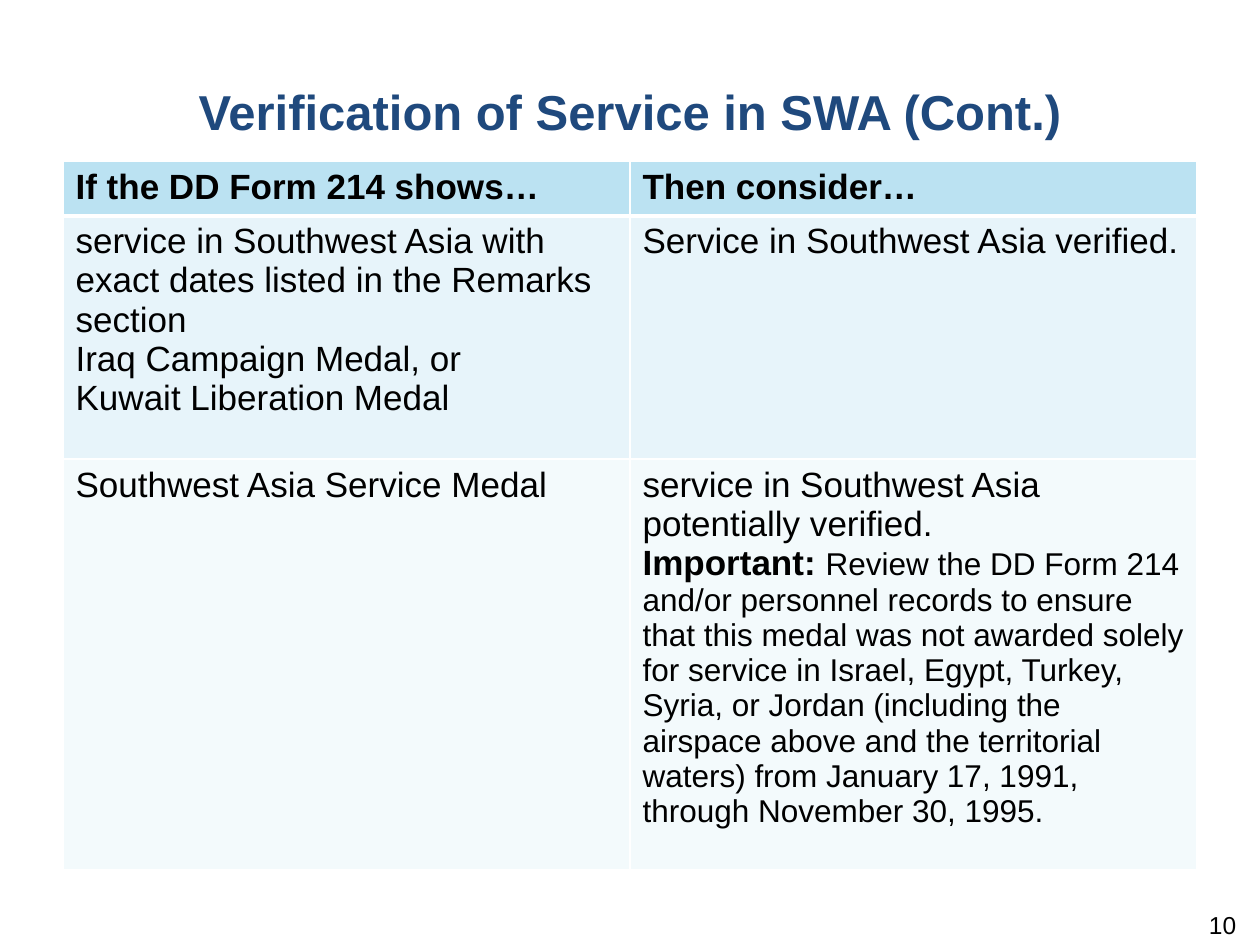
from typing import NamedTuple

from lxml.etree import SubElement
from pptx import Presentation
from pptx.dml.color import RGBColor
from pptx.enum.text import MSO_ANCHOR, PP_ALIGN
from pptx.oxml.ns import qn
from pptx.util import Inches, Pt


class Run(NamedTuple):
    """Text with its size, weight and colour."""
    text: str
    size: int = 20
    bold: bool = False
    tint: str = "000000"


class Row(NamedTuple):
    """Table row: height, fill, lower border and cells of paragraphs of runs."""
    height: float
    fill: str
    base: int
    cells: list


class Label(NamedTuple):
    """Text box with its place, alignment and frame format."""
    place: tuple
    run: Run
    align: PP_ALIGN
    frame: dict


LABELS = [
    Label((0.4, 0.57, 9.2, 0.71), Run("Verification of Service in SWA (Cont.)", 28, True, "1F497D"),
          PP_ALIGN.CENTER,
          {"vertical_anchor": MSO_ANCHOR.MIDDLE, "margin_bottom": Inches(0.14)}),
    Label((7.58, 7.22, 2.33, 0.4), Run("10", 14), PP_ALIGN.RIGHT,
          {"vertical_anchor": MSO_ANCHOR.TOP, "margin_top": 0}),
]

REVIEW = (
    "Review the DD Form 214 and/or personnel records to ensure that this medal "
    "was not awarded solely for service in Israel, Egypt, Turkey, Syria, or Jordan "
    "(including the airspace above and the territorial waters) from January 17, 1991, "
    "through November 30, 1995."
)

ROWS = [
    Row(0.41, "BBE2F2", 3, [
        [[Run("If the DD Form 214 shows…", bold=True)]],
        [[Run("Then consider…", bold=True)]],
    ]),
    Row(1.93, "E7F4FA", 1, [
        [[Run("service in Southwest Asia with exact dates listed in the Remarks section")],
         [Run("Iraq Campaign Medal, or")],
         [Run("Kuwait Liberation Medal")]],
        [[Run("Service in Southwest Asia verified.")]],
    ]),
    Row(3.26, "F3FAFC", 1, [
        [[Run("Southwest Asia Service Medal")]],
        [[Run("service in Southwest Asia potentially verified.")],
         [Run("Important: ", bold=True), Run(REVIEW, 18)]],
    ]),
]


def shade(code: str) -> RGBColor:
    """Turn a hex string into a colour."""
    return RGBColor.from_string(code)


def style(item: object, form: dict) -> None:
    """Set each format value on the item."""
    for name, value in form.items():
        setattr(item, name, value)


def write(frame: object, paras: list, align: PP_ALIGN = PP_ALIGN.LEFT) -> None:
    """Fill a text frame with paragraphs of runs."""
    for num, runs in enumerate(paras):
        para = frame.add_paragraph() if num else frame.paragraphs[0]
        para.alignment = align
        for run in runs:
            part = para.add_run()
            part.text = run.text
            style(part.font, {"name": "Arial", "size": Pt(run.size), "bold": run.bold})
            part.font.color.rgb = shade(run.tint)


def edge(cell: object, widths: dict) -> None:
    """Draw white cell borders of the given point widths."""
    props = cell._tc.get_or_add_tcPr()
    for num, (side, width) in enumerate(widths.items()):
        line = SubElement(props, qn(f"a:ln{side}"), w=str(Pt(width)))
        fill = SubElement(line, qn("a:solidFill"))
        SubElement(fill, qn("a:srgbClr"), val="FFFFFF")
        props.remove(line)
        props.insert(num, line)


def draw_label(slide: object, label: Label) -> None:
    """Add one text box."""
    frame = slide.shapes.add_textbox(*map(Inches, label.place)).text_frame
    style(frame, {"word_wrap": True, **label.frame})
    write(frame, [[label.run]], label.align)


def draw_table(slide: object, rows: list) -> None:
    """Add the table of forms and findings."""
    size = Inches(9), Inches(sum(row.height for row in rows))
    table = slide.shapes.add_table(len(rows), 2, Inches(0.5), Inches(1.28), *size).table
    above = 1
    for num, row in enumerate(rows):
        table.rows[num].height = Inches(row.height)
        for cell, paras in zip(table.rows[num].cells, row.cells):
            cell.fill.solid()
            cell.fill.fore_color.rgb = shade(row.fill)
            edge(cell, {"L": 1, "R": 1, "T": above, "B": row.base})
            write(cell.text_frame, paras)
        above = row.base


def main() -> None:
    """Build and save the slide."""
    deck = Presentation()
    style(deck, {"slide_width": Inches(10), "slide_height": Inches(7.5)})
    slide = deck.slides.add_slide(deck.slide_layouts[6])
    for label in LABELS:
        draw_label(slide, label)
    draw_table(slide, ROWS)
    deck.save("out.pptx")


if __name__ == "__main__":
    main()
